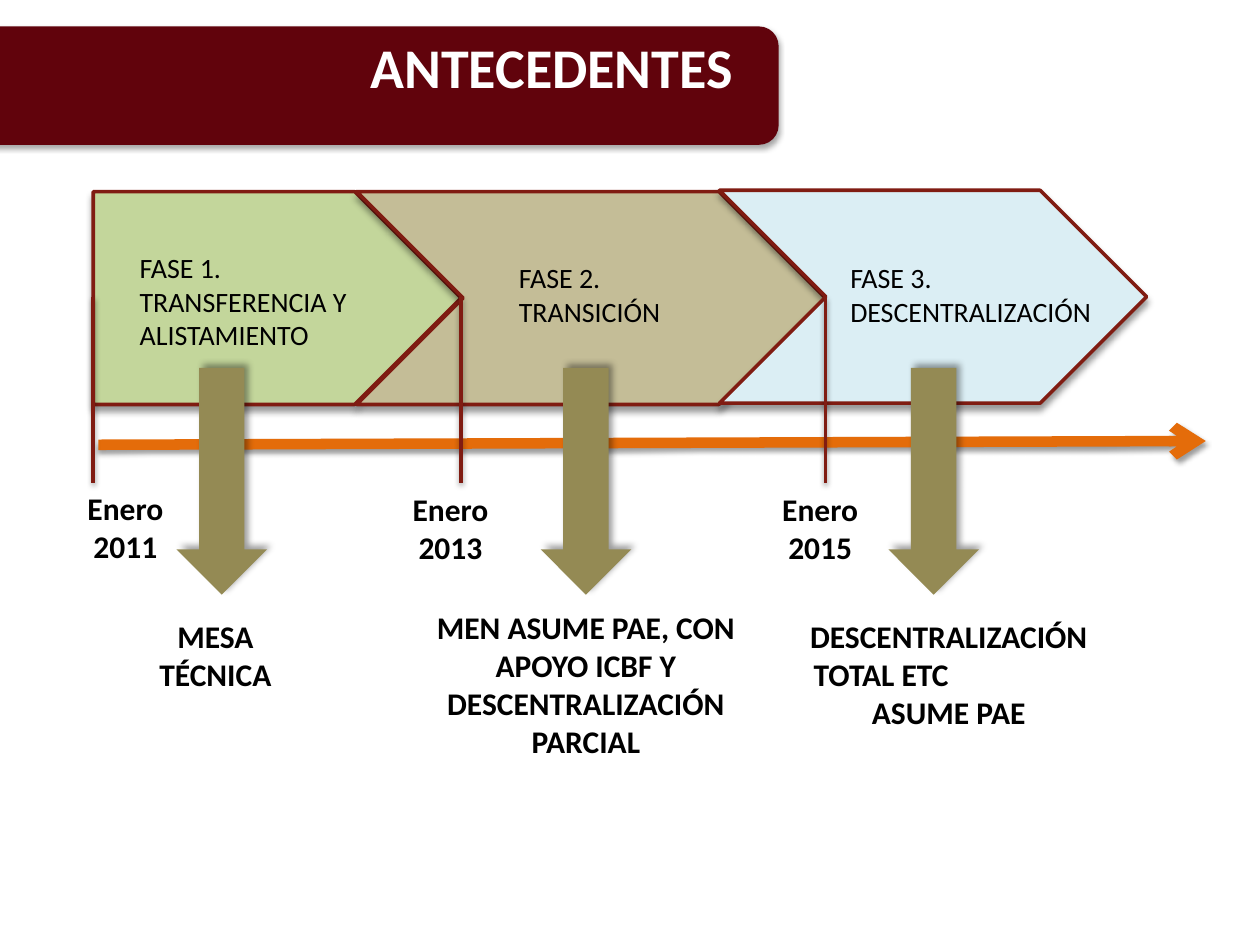
from dataclasses import dataclass

from lxml.etree import SubElement
from pptx import Presentation
from pptx.dml.color import RGBColor
from pptx.enum.shapes import MSO_CONNECTOR, MSO_SHAPE
from pptx.enum.text import MSO_ANCHOR, PP_ALIGN
from pptx.oxml.ns import qn
from pptx.util import Inches, Pt


@dataclass(frozen=True)
class Theme:
    font: str = "Calibri"
    title_size: int = 32
    phase_size: int = 16
    label_size: int = 18
    ink: str = "000000"
    title_ink: str = "FFFFFF"
    banner: str = "61030C"
    outline: str = "801C12"
    axis: str = "E46C0A"
    arrow: str = "948A54"


THEME = Theme()
TITLE = "ANTECEDENTES"
TITLE_BOX = (1.14, 0.21, 4.88, 1.18)
BANNER_BOX = (-0.2, 0.21, 6.38, 0.94)

# Each box is left, top, width, height in inches; "\v" breaks a line.
PHASES = [
    dict(name="FASE 1.\vTRANSFERENCIA Y ALISTAMIENTO", name_box=(1.01, 1.94, 2.02, 0.91),
         preset=MSO_SHAPE.PENTAGON, fill="C3D69B", box=(0.74, 1.52, 2.92, 1.69),
         date="Enero\v2011", date_box=(0.59, 3.83, 0.81, 0.71), start=0.74, arrow_left=1.4,
         outcome=["MESA\vTÉCNICA"], outcome_box=(0.86, 4.85, 1.7, 0.71)),
    dict(name="FASE 2.\vTRANSICIÓN", name_box=(4.02, 2.02, 2.02, 0.57),
         preset=MSO_SHAPE.CHEVRON, fill="C4BD97", box=(2.83, 1.52, 3.72, 1.69),
         date="Enero\v2013", date_box=(3.17, 3.84, 0.81, 0.71), start=3.66, arrow_left=4.29,
         outcome=["MEN ASUME PAE, CON\vAPOYO ICBF Y\vDESCENTRALIZACIÓN\vPARCIAL"],
         outcome_box=(3.03, 4.78, 3.24, 1.62)),
    dict(name="FASE 3.\vDESCENTRALIZACIÓN", name_box=(6.65, 2.02, 2.17, 0.64),
         preset=MSO_SHAPE.CHEVRON, fill="DBEEF4", box=(5.71, 1.51, 3.39, 1.69),
         date="Enero\v2015", date_box=(5.81, 3.84, 1.4, 0.71), start=6.55, arrow_left=7.05,
         outcome=["DESCENTRALIZACIÓN", "TOTAL ETC", "ASUME PAE"],
         outcome_box=(6.26, 4.85, 2.54, 1.01)),
]
AXIS = (0.78, 3.53, 9.57, 3.5)
TICK_TOP, TICK_BOTTOM = 2.36, 3.83
ARROW_TOP, ARROW_WIDTH, ARROW_HEIGHT = 2.92, 0.72, 1.8


def inches(values):
    return [Inches(value) for value in values]


def add_shadow(properties, opacity, blur, distance, angle):
    for old in properties.findall(qn("a:effectLst")):
        properties.remove(old)
    effects = SubElement(properties, qn("a:effectLst"))
    shadow = SubElement(effects, qn("a:outerShdw"), blurRad=str(Pt(blur)), dist=str(Pt(distance)),
                        dir=str(angle * 60000), rotWithShape="0")
    colour = SubElement(shadow, qn("a:srgbClr"), val=THEME.ink)
    SubElement(colour, qn("a:alpha"), val=str(opacity * 1000))


def add_block(slide, preset, box, fill, outline=None, shadow=(40, 4, 3, 90)):
    block = slide.shapes.add_shape(preset, *inches(box))
    block.fill.solid()
    block.fill.fore_color.rgb = RGBColor.from_string(fill)
    if outline:
        block.line.color.rgb = RGBColor.from_string(outline)
        block.line.width = Pt(2)
    else:
        block.line.fill.background()
    block.shadow.inherit = False
    add_shadow(block._element.spPr, *shadow)


def add_line(slide, ends, colour, width, arrowhead=False):
    line = slide.shapes.add_connector(MSO_CONNECTOR.STRAIGHT, *inches(ends))
    line.line.color.rgb = RGBColor.from_string(colour)
    line.line.width = Pt(width)
    if arrowhead:
        SubElement(line.line._get_or_add_ln(), qn("a:tailEnd"), type="arrow")
    add_shadow(line._element.spPr, 38, 3.1, 1.6, 90)


def write(frame, paragraphs, size, colour, align, bold):
    frame.word_wrap = True
    frame.vertical_anchor = MSO_ANCHOR.TOP
    frame.text = "\n".join(paragraphs)
    for paragraph in frame.paragraphs:
        paragraph.alignment = align
        for run in paragraph.runs:
            run.font.name = THEME.font
            run.font.size = Pt(size)
            run.font.bold = bold
            run.font.color.rgb = RGBColor.from_string(colour)


def add_label(slide, box, paragraphs, size=THEME.label_size, align=PP_ALIGN.CENTER, bold=True):
    label = slide.shapes.add_textbox(*inches(box))
    write(label.text_frame, paragraphs, size, THEME.ink, align, bold)
    return label


def add_title(slide):
    add_block(slide, MSO_SHAPE.ROUNDED_RECTANGLE, BANNER_BOX, THEME.banner,
              shadow=(35, 3.1, 1.8, 90))
    title = slide.shapes.title
    title.left, title.top, title.width, title.height = inches(TITLE_BOX)
    title.text_frame.margin_right = Inches(0.2)
    write(title.text_frame, [TITLE], THEME.title_size, THEME.title_ink, PP_ALIGN.RIGHT, True)
    slide.shapes._spTree.append(title._element)  # in front of the banner


def main():
    deck = Presentation()
    deck.slide_width, deck.slide_height = Inches(10), Inches(7.5)
    slide = deck.slides.add_slide(deck.slide_layouts[5])

    add_line(slide, AXIS, THEME.axis, 6, arrowhead=True)
    for phase in PHASES:
        add_block(slide, phase["preset"], phase["box"], phase["fill"], THEME.outline)
    for phase in PHASES:
        add_label(slide, phase["name_box"], [phase["name"]], THEME.phase_size,
                  PP_ALIGN.LEFT, False)
        add_label(slide, phase["date_box"], [phase["date"]])
        add_line(slide, (phase["start"], TICK_TOP, phase["start"], TICK_BOTTOM),
                 THEME.outline, 2)
        add_block(slide, MSO_SHAPE.DOWN_ARROW,
                  (phase["arrow_left"], ARROW_TOP, ARROW_WIDTH, ARROW_HEIGHT),
                  THEME.arrow, shadow=(40, 4, 3, 315))
        outcome = add_label(slide, phase["outcome_box"], phase["outcome"])

    total = outcome.text_frame.paragraphs[1]
    total.alignment = PP_ALIGN.LEFT
    total._p.get_or_add_pPr().set("marL", str(Inches(0.1)))

    add_title(slide)
    deck.save("out.pptx")


if __name__ == "__main__":
    main()
